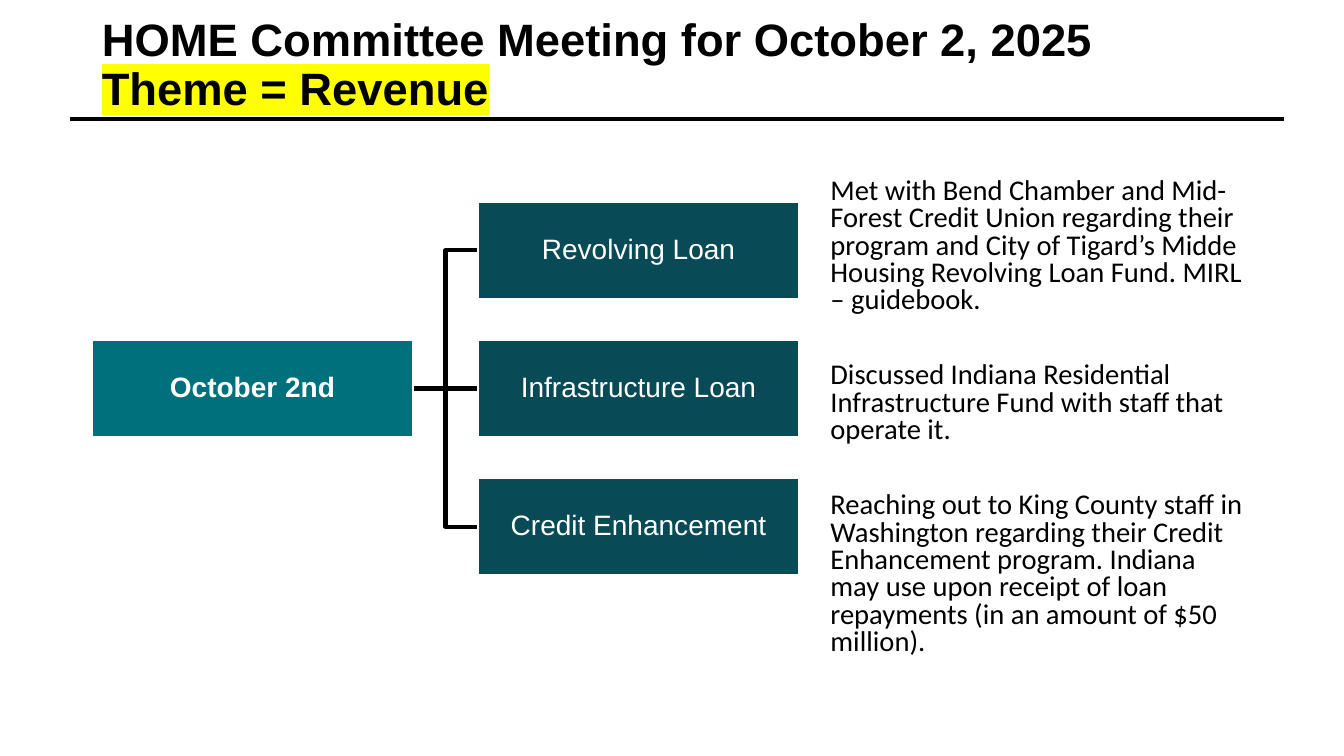
from lxml import etree
from pptx import Presentation
from pptx.dml.color import RGBColor
from pptx.enum import shapes, text
from pptx.oxml import ns
from pptx.util import Pt

BLACK = RGBColor(0x00, 0x00, 0x00)
WHITE = RGBColor(0xFF, 0xFF, 0xFF)
TEAL = RGBColor(0x00, 0x71, 0x7C)
DARK_TEAL = RGBColor(0x08, 0x4A, 0x55)
YELLOW = RGBColor(0xFF, 0xFF, 0x00)

BOX_WIDTH, BOX_HEIGHT = 229.7, 69.8
ROOT_LEFT, TOPIC_LEFT = 65.5, 341.3
FIRST_TOP, ROW_PITCH = 144, 98.65

TOPICS = ["Revolving Loan", "Infrastructure Loan", "Credit Enhancement"]
NOTES = [
    "Met with Bend Chamber and Mid-Forest Credit Union regarding their program "
    "and City of Tigard’s Midde Housing Revolving Loan Fund. MIRL – guidebook.",
    "Discussed Indiana Residential Infrastructure Fund with staff that operate it.",
    "Reaching out to King County staff in Washington regarding their Credit "
    "Enhancement program. Indiana may use upon receipt of loan repayments "
    "(in an amount of $50 million).",
]


class SlideBuilder:
    heading_font = "Arial"
    body_font = "Calibri"
    line_width = 3

    def __init__(self, deck):
        self.page = deck.slides.add_slide(deck.slide_layouts[5])

    def add_span(self, para, words, size, color, font, bold=False, highlight=None):
        span = para.add_run()
        span.text = words
        span.font.size = Pt(size)
        span.font.bold = bold
        span.font.color.rgb = color
        span.font.name = font
        if highlight is not None:
            mark = etree.Element(ns.qn("a:highlight"))
            etree.SubElement(mark, ns.qn("a:srgbClr"), val=str(highlight))
            span.font.fill  # the highlight follows the fill
            span._r.rPr.find(ns.qn("a:solidFill")).addnext(mark)

    def title(self, first_line, marked_line, left, top, width, height):
        box = self.page.shapes.title
        box.left, box.top, box.width, box.height = map(Pt, (left, top, width, height))
        frame = box.text_frame
        frame.word_wrap = True
        frame.auto_size = text.MSO_AUTO_SIZE.NONE
        frame.vertical_anchor = text.MSO_ANCHOR.BOTTOM
        para = frame.paragraphs[0]
        para.alignment = text.PP_ALIGN.LEFT
        para.line_spacing = 0.9
        style = (32.4, BLACK, self.heading_font, True)
        self.add_span(para, first_line, *style)
        para.add_line_break()
        self.add_span(para, marked_line, *style, highlight=YELLOW)

    def box(self, words, left, top, fill, bold=False):
        box = self.page.shapes.add_shape(
            shapes.MSO_SHAPE.RECTANGLE, Pt(left), Pt(top), Pt(BOX_WIDTH), Pt(BOX_HEIGHT))
        box.shadow.inherit = False
        box.fill.solid()
        box.fill.fore_color.rgb = fill
        box.line.color.rgb = WHITE
        box.line.width = Pt(1.5)
        frame = box.text_frame
        frame.word_wrap = True
        frame.vertical_anchor = text.MSO_ANCHOR.MIDDLE
        frame.margin_left = frame.margin_right = Pt(1)
        frame.margin_top = frame.margin_bottom = Pt(1)
        para = frame.paragraphs[0]
        para.alignment = text.PP_ALIGN.CENTER
        para.line_spacing = 0.9
        self.add_span(para, words, 20, WHITE, self.heading_font, bold)
        return box

    def line(self, kind, start_x=0, start_y=0, end_x=0, end_y=0):
        line = self.page.shapes.add_connector(
            kind, Pt(start_x), Pt(start_y), Pt(end_x), Pt(end_y))
        line.line.color.rgb = BLACK
        line.line.width = Pt(self.line_width)
        etree.SubElement(line.element.spPr, ns.qn("a:effectLst"))
        return line

    def branch(self, root, topic):
        straight = root.top == topic.top
        kind = shapes.MSO_CONNECTOR.STRAIGHT if straight else shapes.MSO_CONNECTOR.ELBOW
        line = self.line(kind)
        line.begin_connect(root, 3)
        line.end_connect(topic, 1)
        root.element.addprevious(line.element)  # keep branches behind the boxes

    def paragraphs(self, notes, left, top, width, height, gap):
        box = self.page.shapes.add_textbox(Pt(left), Pt(top), Pt(width), Pt(height))
        frame = box.text_frame
        frame.word_wrap = True
        for index, note in enumerate(notes):
            para = frame.add_paragraph() if index else frame.paragraphs[0]
            para.line_spacing = 0.8
            para.space_before = Pt(gap if index else 0)
            self.add_span(para, note, 20.4, BLACK, self.body_font)


def main():
    deck = Presentation()
    deck.slide_width, deck.slide_height = Pt(960), Pt(540)
    slide = SlideBuilder(deck)

    # Title and rule
    slide.line(shapes.MSO_CONNECTOR.STRAIGHT, 49.7, 85, 917.3, 85)
    slide.title("HOME Committee Meeting for October 2, 2025", "Theme = Revenue",
                65.5, 38.9, 828, 46.8)

    # Topic tree
    root = slide.box("October 2nd", ROOT_LEFT, FIRST_TOP + ROW_PITCH, TEAL, bold=True)
    for row, topic in enumerate(TOPICS):
        box = slide.box(topic, TOPIC_LEFT, FIRST_TOP + row * ROW_PITCH, DARK_TEAL)
        slide.branch(root, box)

    # Notes beside the topics
    slide.paragraphs(NOTES, 586.1, 123.8, 313.2, 331.2, gap=34)

    deck.save("out.pptx")


if __name__ == "__main__":
    main()
